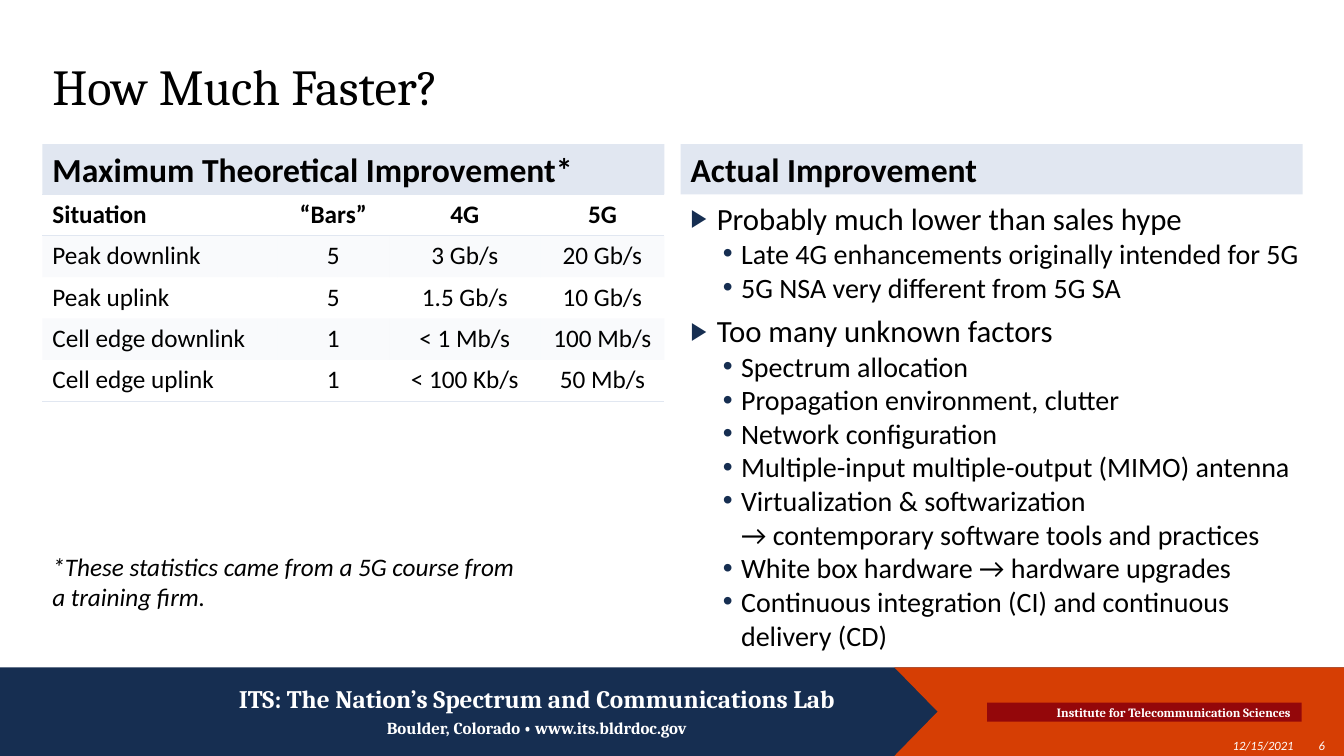
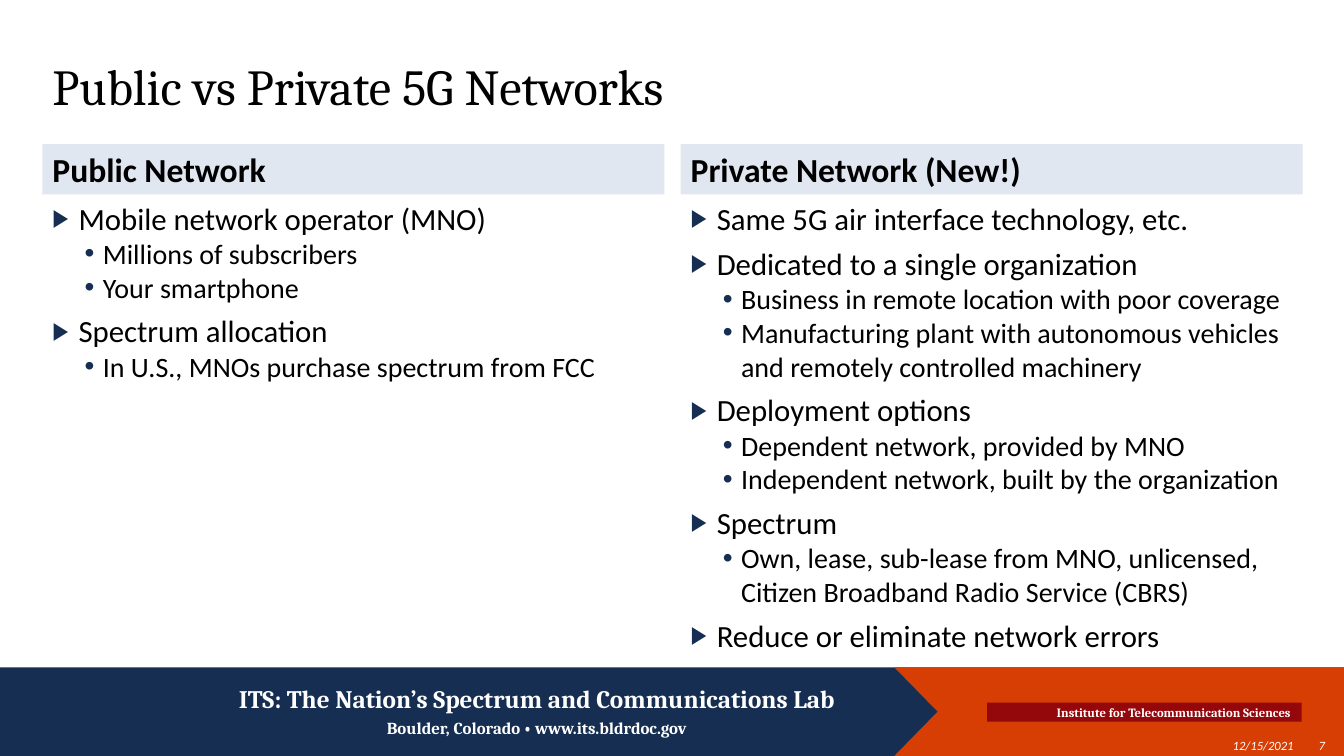
from dataclasses import dataclass
from typing import Optional

import lxml.etree
import pptx
import pptx.dml.color
import pptx.enum.shapes
import pptx.enum.text
import pptx.oxml.ns
import pptx.shapes.base
import pptx.slide
import pptx.text.text
import pptx.util

Inches = pptx.util.Inches
Pt = pptx.util.Pt
Align = pptx.enum.text.PP_ALIGN
Anchor = pptx.enum.text.MSO_ANCHOR
qn = pptx.oxml.ns.qn

COLORS = {
    "navy": "162E51",
    "orange": "D63E04",
    "red": "94070A",
    "pale": "E1E7F1",
    "black": "000000",
    "white": "FFFFFF",
}
HEADING_FONT = "Cambria"
BODY_FONT = "Calibri"
SLIDE_WIDTH, SLIDE_HEIGHT = 13.33, 7.5
COLUMN_LEFTS = (0.42, 6.75)
COLUMN_WIDTH = 6.17
HEADER_TOP, HEADER_HEIGHT = 1.43, 0.5
BODY_TOP, BODY_HEIGHT = HEADER_TOP + HEADER_HEIGHT, 4.5
BAND_TOP = 6.62
BAND_HEIGHT = SLIDE_HEIGHT - BAND_TOP
TABLE_COLUMNS = (2.33, 1.11, 1.5, 1.23)
ROW_HEIGHT = 0.41
PLAIN_TABLE_STYLE = "{2D5ABB26-0587-4C30-8999-92F81FD0307C}"


@dataclass(frozen=True)
class Style:
    size: float
    font: str = BODY_FONT
    color: str = "black"
    bold: bool = False
    italic: bool = False


@dataclass(frozen=True)
class Level:
    style: Style
    bullet: str
    bullet_percent: int
    margin: float
    hanging: float
    space_before: float


@dataclass(frozen=True)
class Item:
    text: str
    level: int = 1


@dataclass(frozen=True)
class Column:
    heading: str
    items: tuple[Item, ...] = ()
    width: float = COLUMN_WIDTH


@dataclass(frozen=True)
class Comparison:
    number: int
    title: str
    columns: tuple[Column, Column]
    rows: tuple[tuple[str, ...], ...] = ()
    note: str = ""


TITLE = Style(36, HEADING_FONT)
HEADER = Style(24, bold=True)
NOTE = Style(18, italic=True)
STAMP = Style(9, color="white", italic=True)
LEVELS = (
    Level(Style(22), "▶", 80, 0.26, 0.26, 6),
    Level(Style(20), "•", 100, 0.5, 0.18, 0),
)

COMPARISONS = (
    Comparison(
        6,
        "How Much Faster?",
        (
            Column("Maximum Theoretical Improvement*"),
            Column(
                "Actual Improvement",
                (
                    Item("Probably much lower than sales hype", 0),
                    Item("Late 4G enhancements originally intended for 5G"),
                    Item("5G NSA very different from 5G SA"),
                    Item("Too many unknown factors", 0),
                    Item("Spectrum allocation"),
                    Item("Propagation environment, clutter"),
                    Item("Network configuration"),
                    Item("Multiple-input multiple-output (MIMO) antenna"),
                    Item("Virtualization & softwarization\n→ contemporary software tools and practices"),
                    Item("White box hardware → hardware upgrades"),
                    Item("Continuous integration (CI) and continuous delivery (CD)"),
                ),
                6.33,
            ),
        ),
        (
            ("Situation", "“Bars”", "4G", "5G"),
            ("Peak downlink", "5", "3 Gb/s", "20 Gb/s"),
            ("Peak uplink", "5", "1.5 Gb/s", "10 Gb/s"),
            ("Cell edge downlink", "1", "< 1 Mb/s", "100 Mb/s"),
            ("Cell edge uplink", "1", "< 100 Kb/s", "50 Mb/s"),
        ),
        "*These statistics came from a 5G course from a training firm.",
    ),
    Comparison(
        7,
        "Public vs Private 5G Networks",
        (
            Column(
                "Public Network",
                (
                    Item("Mobile network operator (MNO)", 0),
                    Item("Millions of subscribers"),
                    Item("Your smartphone"),
                    Item("Spectrum allocation", 0),
                    Item("In U.S., MNOs purchase spectrum from FCC"),
                ),
            ),
            Column(
                "Private Network (New!)",
                (
                    Item("Same 5G air interface technology, etc.", 0),
                    Item("Dedicated to a single organization", 0),
                    Item("Business in remote location with poor coverage"),
                    Item("Manufacturing plant with autonomous vehicles and remotely controlled machinery"),
                    Item("Deployment options", 0),
                    Item("Dependent network, provided by MNO"),
                    Item("Independent network, built by the organization"),
                    Item("Spectrum", 0),
                    Item("Own, lease, sub-lease from MNO, unlicensed, Citizen Broadband Radio Service (CBRS)"),
                    Item("Reduce or eliminate network errors", 0),
                ),
            ),
        ),
    ),
)


def rgb(color: str) -> pptx.dml.color.RGBColor:
    return pptx.dml.color.RGBColor.from_string(COLORS[color])


def write(
    paragraph: pptx.text.text._Paragraph, text: str, style: Style, align: Align = Align.LEFT
) -> None:
    paragraph.alignment = align
    for index, line in enumerate(text.split("\n")):
        if index:
            paragraph.add_line_break()
        span = paragraph.add_run()
        span.text = line
        span.font.name = style.font
        span.font.size = Pt(style.size)
        span.font.bold = style.bold
        span.font.italic = style.italic
        span.font.color.rgb = rgb(style.color)


def place(shape: pptx.shapes.base.BaseShape, left: float, top: float, width: float, height: float) -> None:
    shape.left, shape.top = Inches(left), Inches(top)
    shape.width, shape.height = Inches(width), Inches(height)


def prepare(frame: pptx.text.text.TextFrame, anchor: Anchor) -> None:
    frame.word_wrap = True
    frame.auto_size = pptx.enum.text.MSO_AUTO_SIZE.NONE
    frame.vertical_anchor = anchor


def paint(shape: pptx.shapes.base.BaseShape, color: str) -> None:
    shape.fill.solid()
    shape.fill.fore_color.rgb = rgb(color)
    shape.line.fill.background()
    shape.shadow.inherit = False


def add_bar(
    page: pptx.slide.Slide, color: str, left: float, top: float, width: float, height: float
) -> pptx.shapes.base.BaseShape:
    bar = page.shapes.add_shape(
        pptx.enum.shapes.MSO_SHAPE.RECTANGLE, Inches(left), Inches(top), Inches(width), Inches(height)
    )
    paint(bar, color)
    return bar


def add_text(
    page: pptx.slide.Slide, left: float, top: float, width: float, height: float,
    text: str, style: Style, align: Align = Align.LEFT, anchor: Anchor = Anchor.TOP,
) -> pptx.text.text.TextFrame:
    box = page.shapes.add_textbox(Inches(left), Inches(top), Inches(width), Inches(height))
    prepare(box.text_frame, anchor)
    write(box.text_frame.paragraphs[0], text, style, align)
    return box.text_frame


def add_footer(page: pptx.slide.Slide, number: int) -> None:
    add_bar(page, "navy", 0, BAND_TOP, SLIDE_WIDTH, BAND_HEIGHT)
    builder = page.shapes.build_freeform(Inches(8.87), Inches(BAND_TOP))
    outline = ((SLIDE_WIDTH, BAND_TOP), (SLIDE_WIDTH, SLIDE_HEIGHT), (8.87, SLIDE_HEIGHT), (9.3, 7.06))
    builder.add_line_segments([(Inches(x), Inches(y)) for x, y in outline])
    paint(builder.convert_to_shape(), "orange")
    frame = add_text(
        page, 1.42, 6.73, 7.81, 0.65, "ITS: The Nation’s Spectrum and Communications Lab",
        Style(18, HEADING_FONT, "white", True), Align.CENTER,
    )
    address = frame.add_paragraph()
    address.space_before = Pt(3)
    write(
        address, "Boulder, Colorado • www.its.bldrdoc.gov",
        Style(12, HEADING_FONT, "white", True), Align.CENTER,
    )
    bar = add_bar(page, "red", 9.79, 6.97, 3.12, 0.19)
    frame = bar.text_frame
    prepare(frame, Anchor.MIDDLE)
    frame.margin_left = Inches(0.69)
    frame.margin_right = frame.margin_top = frame.margin_bottom = 0
    write(
        frame.paragraphs[0], "Institute for Telecommunication Sciences",
        Style(9, HEADING_FONT, "white", True),
    )
    frame = add_text(page, 12.04, 7.3, 0.79, 0.2, "12/15/2021", STAMP, Align.RIGHT, Anchor.MIDDLE)
    frame.margin_left = frame.margin_right = 0
    add_text(page, 12.84, 7.3, 0.4, 0.2, str(number), STAMP, Align.RIGHT, Anchor.MIDDLE)


def add_bullet(paragraph: pptx.text.text._Paragraph, level: Level) -> None:
    properties = paragraph._p.get_or_add_pPr()
    properties.set("marL", str(Inches(level.margin)))
    properties.set("indent", str(-Inches(level.hanging)))
    tint = lxml.etree.SubElement(properties, qn("a:buClr"))
    lxml.etree.SubElement(tint, qn("a:srgbClr"), val=COLORS["navy"])
    lxml.etree.SubElement(properties, qn("a:buSzPct"), val=str(level.bullet_percent * 1000))
    lxml.etree.SubElement(properties, qn("a:buFont"), typeface="Arial")
    lxml.etree.SubElement(properties, qn("a:buChar"), char=level.bullet)


def fill_list(frame: pptx.text.text.TextFrame, items: tuple[Item, ...]) -> None:
    prepare(frame, Anchor.TOP)
    for index, item in enumerate(items):
        paragraph = frame.add_paragraph() if index else frame.paragraphs[0]
        level = LEVELS[item.level]
        paragraph.level = item.level
        add_bullet(paragraph, level)
        paragraph.space_before = Pt(level.space_before if index else 0)
        write(paragraph, item.text, level.style)


def add_border(properties: lxml.etree._Element, side: str) -> None:
    border = lxml.etree.Element(qn(f"a:{side}"), w=str(Pt(1)))
    fill = lxml.etree.SubElement(border, qn("a:solidFill"))
    lxml.etree.SubElement(fill, qn("a:srgbClr"), val=COLORS["pale"])
    properties.insert(0, border)


def add_rates(page: pptx.slide.Slide, rows: tuple[tuple[str, ...], ...]) -> None:
    graphic = page.shapes.add_table(
        len(rows), len(TABLE_COLUMNS), Inches(COLUMN_LEFTS[0]), Inches(BODY_TOP),
        Inches(COLUMN_WIDTH), Inches(ROW_HEIGHT * len(rows)),
    )
    table = graphic.table
    table.first_row = table.horz_banding = False
    next(graphic.element.iter(qn("a:tableStyleId"))).text = PLAIN_TABLE_STYLE
    for column, width in zip(table.columns, TABLE_COLUMNS):
        column.width = Inches(width)
    for row_index, texts in enumerate(rows):
        table.rows[row_index].height = Inches(ROW_HEIGHT)
        for column_index, text in enumerate(texts):
            cell = table.cell(row_index, column_index)
            align = Align.CENTER if column_index else Align.LEFT
            write(cell.text_frame.paragraphs[0], text, Style(18, bold=row_index == 0), align)
            cell.fill.background()
            properties = cell._tc.get_or_add_tcPr()
            if row_index % 2:
                cell.fill.solid()
                cell.fill.fore_color.rgb = rgb("pale")
                tint = next(properties.iter(qn("a:srgbClr")))
                lxml.etree.SubElement(tint, qn("a:alpha"), val="20000")
            if row_index in (0, len(rows) - 1):
                add_border(properties, "lnB")
            if row_index == 0:
                add_border(properties, "lnT")


def add_comparison(deck: pptx.presentation.Presentation, content: Comparison) -> None:
    page = deck.slides.add_slide(deck.slide_layouts.get_by_name("Comparison"))
    add_footer(page, content.number)
    title = page.shapes.title
    place(title, COLUMN_LEFTS[0], 0.38, 12.5, 1)
    prepare(title.text_frame, Anchor.MIDDLE)
    title.text_frame.paragraphs[0].line_spacing = 0.9
    write(title.text_frame.paragraphs[0], content.title, TITLE)
    for index, (left, column) in enumerate(zip(COLUMN_LEFTS, content.columns)):
        header, body = (page.placeholders[2 * index + offset] for offset in (1, 2))
        place(header, left, HEADER_TOP, COLUMN_WIDTH, HEADER_HEIGHT)
        header.fill.solid()
        header.fill.fore_color.rgb = rgb("pale")
        prepare(header.text_frame, Anchor.BOTTOM)
        header.text_frame.paragraphs[0].space_before = Pt(0)
        write(header.text_frame.paragraphs[0], column.heading, HEADER)
        if column.items:
            place(body, left, BODY_TOP, column.width, BODY_HEIGHT)
            fill_list(body.text_frame, column.items)
        else:
            body.element.getparent().remove(body.element)
    if content.rows:
        add_rates(page, content.rows)
    if content.note:
        add_text(page, COLUMN_LEFTS[0], 5.42, 4.81, 0.71, content.note, NOTE)


def main() -> None:
    deck = pptx.Presentation()
    deck.slide_width, deck.slide_height = Inches(SLIDE_WIDTH), Inches(SLIDE_HEIGHT)
    for content in COMPARISONS:
        add_comparison(deck, content)
    deck.save("out.pptx")


if __name__ == "__main__":
    main()
